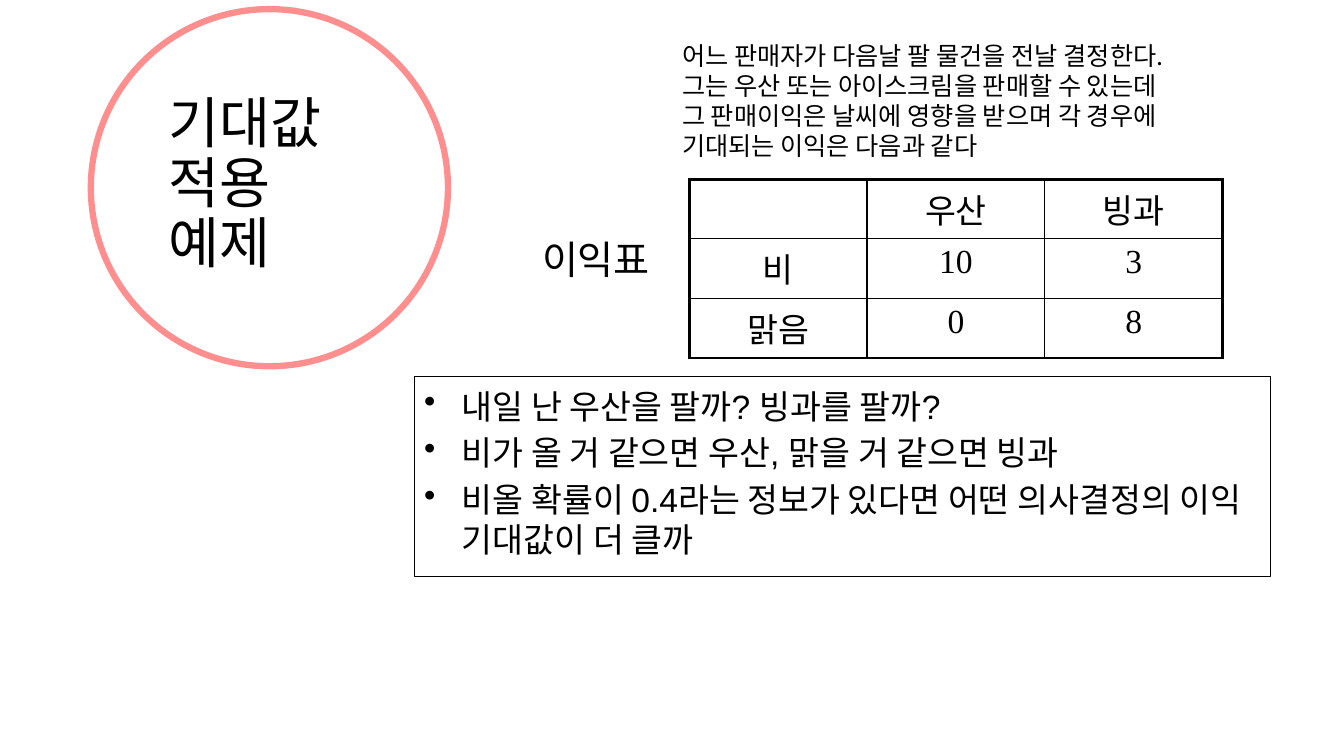
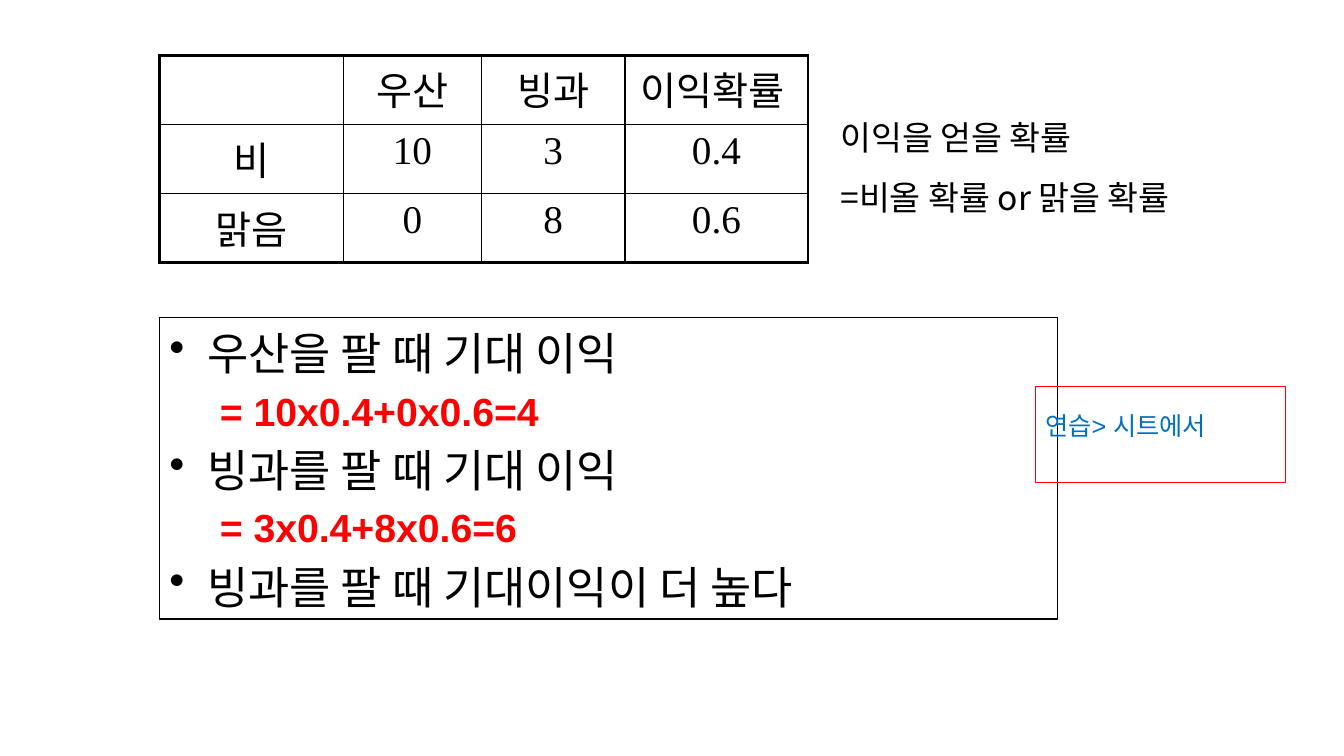
from dataclasses import dataclass

from lxml import etree
from pptx import Presentation
from pptx import util as u
from pptx.dml import color
from pptx.enum import shapes, text
from pptx.oxml import ns

Cm, Pt = u.Cm, u.Pt


@dataclass(frozen=True)
class Theme:
    ink: str = "000000"
    red: str = "FF0000"
    blue: str = "0070C0"
    sans: str = "Arial"
    serif: str = "Times New Roman"
    asian: str = "Noto Sans CJK KR"
    title: float = 39.6
    huge: int = 32
    large: int = 28
    body: int = 24
    small: int = 18
    lead: float = 1.19
    thick: float = 2.25
    thin: float = 1
    frame: float = 0.75
    ring: float = 4.5
    alpha: int = 43


T = Theme()


def sub(node, tag, **attrs):
    return etree.SubElement(node, ns.qn(tag), attrs)


def style(para, size, face, tint=T.ink, bold=False):
    font = para.font
    font.size, font.name, font.bold = Pt(size), face, bold
    font.color.rgb = color.RGBColor.from_string(tint)
    sub(para._p.pPr.find(ns.qn("a:defRPr")), "a:ea", typeface=T.asian)


def gap(para):
    para.space_before = Pt(1)
    node = para._p.pPr.find(ns.qn("a:spcBef"))
    node.clear()
    sub(node, "a:spcPct", val="20000")


def indent(para, left, hang, mark=None):
    props = para._p.get_or_add_pPr()
    props.set("marL", str(Cm(left)))
    props.set("indent", str(-Cm(hang)))
    if mark:
        sign = etree.Element(ns.qn("a:buChar"), {"char": mark})
        props.find(ns.qn("a:defRPr")).addprevious(sign)


def write(shape, lines, size, face, tint=T.ink, lead=T.lead):
    frame = shape.text_frame
    frame.word_wrap = True
    frame.vertical_anchor = text.MSO_ANCHOR.TOP
    frame.margin_top = Cm(0.22)
    frame.text = "\n".join(lines)
    for para in frame.paragraphs:
        para.alignment = text.PP_ALIGN.LEFT
        para.line_spacing = Pt(round(size * lead, 1))
        style(para, size, face, tint)
    return frame


def label(slide, area, lines, size, lead=T.lead):
    box = slide.shapes.add_textbox(*map(Cm, area))
    return write(box, lines, size, T.asian, lead=lead)


def outline(slide, kind, area, tint, width):
    shape = slide.shapes.add_shape(kind, *map(Cm, area))
    shape.shadow.inherit = False
    shape.fill.background()
    shape.line.color.rgb = color.RGBColor.from_string(tint)
    shape.line.width = Pt(width)
    return shape


def panel(slide, area, tint=T.ink):
    return outline(slide, shapes.MSO_SHAPE.RECTANGLE, area, tint, T.frame)


def bullets(slide, area, items, size):
    frame = panel(slide, area).text_frame
    frame.word_wrap = True
    frame.vertical_anchor = text.MSO_ANCHOR.TOP
    frame.margin_top = Cm(0.22)
    for i, (words, answer) in enumerate(items):
        para = frame.paragraphs[0] if i == 0 else frame.add_paragraph()
        para.text = words
        para.alignment = text.PP_ALIGN.LEFT
        high = T.large if answer else size
        para.line_spacing = Pt(round(high * T.lead, 1))
        gap(para)
        style(para, high, T.sans, T.red if answer else T.ink, answer)
        if answer:
            para.level = 1
            indent(para, 2.06, 0.79)
        else:
            indent(para, 0.95, 0.95, "•")


def border(cell, sides):
    props = cell._tc.get_or_add_tcPr()
    for side, width in zip("LRTB", sides):
        line = sub(props, "a:ln" + side, w=str(Pt(width)))
        sub(sub(line, "a:solidFill"), "a:srgbClr", val=T.ink)
    cell.fill.background()


def grid(slide, left, top, cols, high, rows, size, heavy=()):
    shape = slide.shapes.add_table(
        len(rows), len(cols), Cm(left), Cm(top), Cm(sum(cols)), Cm(high * len(rows)))
    table = shape.table
    table.first_row = table.horz_banding = False
    for col, width in zip(table.columns, cols):
        col.width = Cm(width)
    bold_x = {0, len(cols), *heavy}
    bold_y = {0, len(rows)}
    for y, row in enumerate(rows):
        table.rows[y].height = Cm(high)
        for x, words in enumerate(row):
            cell = table.cell(y, x)
            edges = (x in bold_x, x + 1 in bold_x, y in bold_y, y + 1 in bold_y)
            border(cell, [T.thick if edge else T.thin for edge in edges])
            para = cell.text_frame.paragraphs[0]
            para.text = words
            para.alignment = text.PP_ALIGN.CENTER
            gap(para)
            style(para, size, T.serif)


def circle(slide, area):
    ring = outline(slide, shapes.MSO_SHAPE.OVAL, area, T.red, T.ring)
    tint = ring.line._ln.find(".//" + ns.qn("a:srgbClr"))
    sub(tint, "a:alpha", val=str(T.alpha * 1000))


PROFIT = [["", "우산", "빙과"], ["비", "10", "3"], ["맑음", "0", "8"]]
CHANCE = ["이익확률 ", "0.4", "0.6"]


def problem(slide):
    head = label(slide, (3.99, 2.03, 5.64, 5.16), ["기대값\v적용\v예제"], T.title, 1.08)
    head.vertical_anchor = text.MSO_ANCHOR.MIDDLE
    grid(slide, 17.37, 4.52, [4.48] * 3, 1.5, PROFIT, T.body)
    label(slide, (13.41, 5.72, 3.23, 1.45), ["이익표"], T.large)
    bullets(slide, (10.44, 9.5, 21.59, 5.03), [
        ("내일 난 우산을 팔까? 빙과를 팔까?", False),
        ("비가 올 거 같으면 우산, 맑을 거 같으면 빙과", False),
        ("비올 확률이 0.4라는 정보가 있다면 어떤 의사결정의 이익 기대값이 더 클까", False),
    ], T.body)
    circle(slide, (2.29, 0.23, 9, 9))
    label(slide, (16.94, 0.81, 14.43, 3.33), [
        "어느 판매자가 다음날 팔 물건을 전날 결정한다.",
        "그는 우산 또는 아이스크림을 판매할 수 있는데",
        "그 판매이익은 날씨에 영향을 받으며 각 경우에",
        "기대되는 이익은 다음과 같다",
    ], T.small)


def answer(slide):
    rows = [row + [odds] for row, odds in zip(PROFIT, CHANCE)]
    grid(slide, 4.02, 1.4, [4.64, 3.47, 3.62, 4.61], 1.74, rows, T.large, (3,))
    label(slide, (20.93, 2.24, 10.29, 3.12),
          ["이익을 얻을 확률", "=비올 확률 or 맑을 확률"], T.body, T.lead * 1.5)
    bullets(slide, (4.02, 8, 22.63, 7.6), [
        ("우산을 팔 때 기대 이익", False),
        ("= 10x0.4+0x0.6=4", True),
        ("빙과를 팔 때 기대 이익", False),
        ("= 3x0.4+8x0.6=6", True),
        ("빙과를 팔 때 기대이익이 더 높다", False),
    ], T.huge)
    note = panel(slide, (26.09, 9.75, 6.3, 2.41), T.red)
    write(note, ["연습> 시트에서"], T.small, T.sans, T.blue, T.lead * 1.5)


def main():
    deck = Presentation()
    deck.slide_width, deck.slide_height = Cm(33.87), Cm(19.05)
    for build in (problem, answer):
        build(deck.slides.add_slide(deck.slide_layouts[6]))
    deck.save("out.pptx")


if __name__ == "__main__":
    main()
